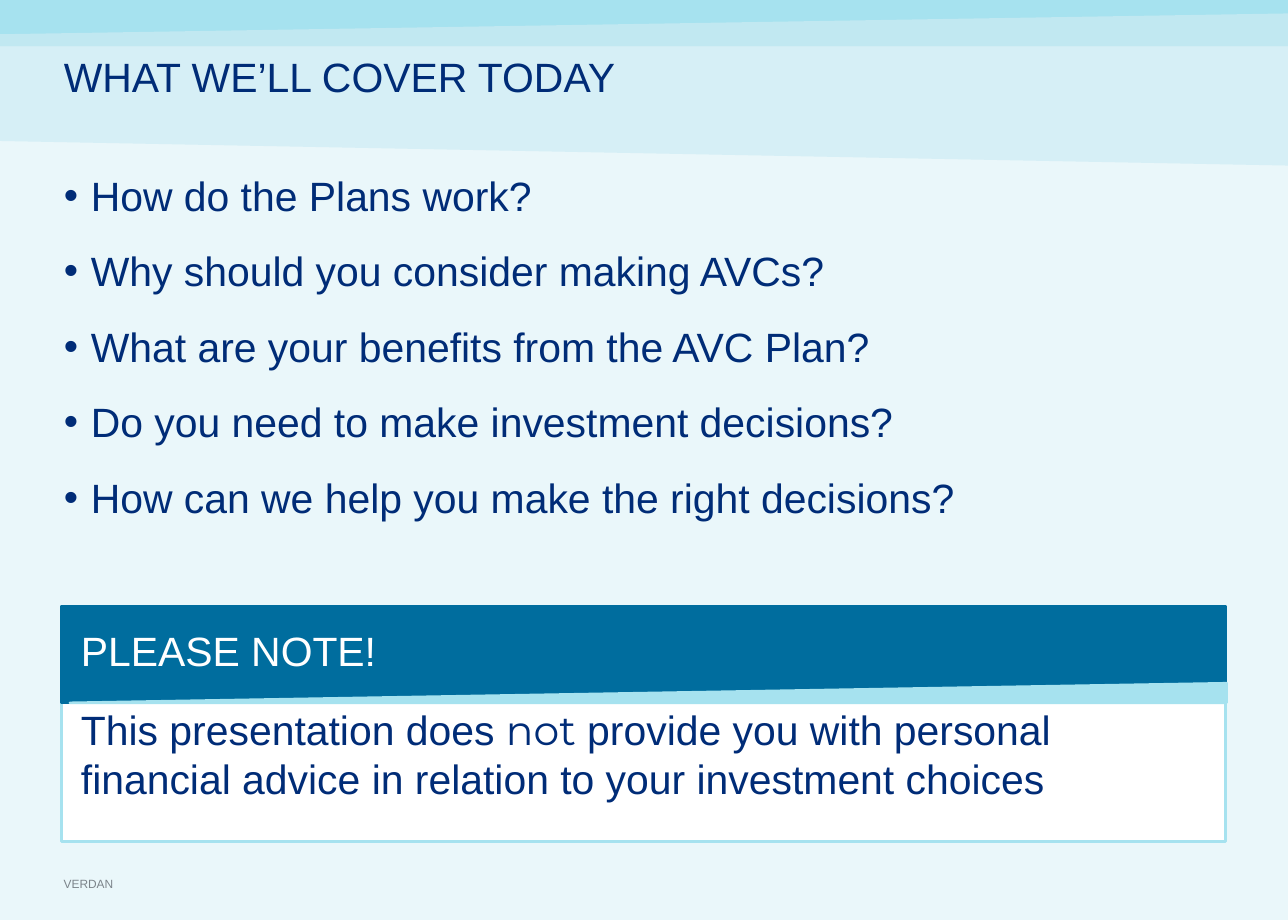
from pptx import Presentation
from pptx.dml.color import RGBColor
from pptx.enum.shapes import MSO_SHAPE
from pptx.enum.text import MSO_ANCHOR, MSO_AUTO_SIZE, PP_ALIGN
from pptx.util import Pt

RECT = MSO_SHAPE.RECTANGLE
TRIANGLE = MSO_SHAPE.RIGHT_TRIANGLE
TOP, BOTTOM = MSO_ANCHOR.TOP, MSO_ANCHOR.BOTTOM
LEFT = PP_ALIGN.LEFT
NO_FIT = MSO_AUTO_SIZE.NONE
PX = 9144  # 100 px to the inch
TITLE_AND_CONTENT = 1

COLORS = {
    "page": "EAF7FA", "navy": "002C77", "blue": "006D9E", "aqua": "A6E2EF",
    "mist": "C1E8F1", "haze": "D6EFF6", "white": "FFFFFF", "gray": "7C848A",
}


class Deck:
    font = "Arial"
    size = 24

    def __init__(self, width, height):
        self.prs = Presentation()
        self.prs.slide_width, self.prs.slide_height = width * PX, height * PX
        layout = self.prs.slide_layouts[TITLE_AND_CONTENT]
        self.slide = self.prs.slides.add_slide(layout)
        self.shapes = self.slide.shapes
        fill = self.slide.background.fill
        fill.solid()
        fill.fore_color.rgb = self.rgb("page")

    def rgb(self, name):
        return RGBColor.from_string(COLORS[name])

    def place(self, shape, box):
        for side, px in zip(("left", "top", "width", "height"), box):
            setattr(shape, side, px * PX)

    def paint(self, shape, fill, line=None):
        shape.shadow.inherit = False
        shape.fill.solid()
        shape.fill.fore_color.rgb = self.rgb(fill)
        if line:
            shape.line.color.rgb = self.rgb(line)
            shape.line.width = Pt(1.5)
        else:
            shape.line.fill.background()

    def set_text(self, shape, paragraphs, color="navy", size=size,
                 insets=(0, 0, 0, 0), anchor=TOP, wrap=True, **spacing):
        """Each paragraph is a list of (text, font) runs."""
        frame = shape.text_frame
        frame_format = {"auto_size": NO_FIT, "word_wrap": wrap,
                        "vertical_anchor": anchor}
        for side, px in zip(("left", "top", "right", "bottom"), insets):
            frame_format[f"margin_{side}"] = px * PX
        for name, value in frame_format.items():
            setattr(frame, name, value)
        for i, runs in enumerate(paragraphs):
            paragraph = frame.add_paragraph() if i else frame.paragraphs[0]
            for name, value in {"alignment": LEFT, **spacing}.items():
                setattr(paragraph, name, value)
            for text, font in runs:
                run = paragraph.add_run()
                run.text = text
                run.font.name, run.font.size = font, Pt(size)
                run.font.color.rgb = self.rgb(color)

    def band(self, points, fill):
        start, *rest = [(x * PX, y * PX) for x, y in points]
        builder = self.shapes.build_freeform(*start)
        builder.add_line_segments(rest, close=True)
        self.paint(builder.convert_to_shape(), fill)

    def title(self, text, box, **style):
        heading = self.shapes.title
        self.place(heading, box)
        self.set_text(heading, [[(text, self.font)]], **style)

    def bullets(self, items, box, indent, **style):
        body = self.slide.placeholders[1]
        self.place(body, box)
        self.set_text(body, [[(item, self.font)] for item in items], **style)
        for paragraph in body.text_frame.paragraphs:
            properties = paragraph._p.get_or_add_pPr()
            properties.set("marL", str(indent * PX))
            properties.set("indent", str(-indent * PX))

    def label(self, text, box, **style):
        caption = self.shapes.add_textbox(*(px * PX for px in box))
        self.set_text(caption, [[(text, self.font)]], **style)

    def panel(self, kind, box, fill, line, runs=(), flip=False, **style):
        shape = self.shapes.add_shape(kind, *(px * PX for px in box))
        self.paint(shape, fill, line)
        if flip:
            shape._element.spPr.xfrm.set("flipH", "1")
        if runs:
            self.set_text(shape, [runs], **style)


def main():
    deck = Deck(1050, 750)

    # Header bands, moved behind the placeholders
    deck.band([(0, 0), (1050, 0), (1050, 14), (0, 31)], "aqua")
    deck.band([(0, 28), (1050, 11), (1050, 38), (0, 38)], "mist")
    deck.band([(0, 38), (1050, 38), (1050, 135), (0, 115)], "haze")
    for placeholder in list(deck.slide.placeholders):
        deck.shapes._spTree.append(placeholder._element)

    # Title and agenda
    deck.title("WHAT WE’LL COVER TODAY", (52, 44, 945, 94),
               insets=(0, 5, 10, 5), line_spacing=0.83)
    deck.bullets([
        "How do the Plans work?",
        "Why should you consider making AVCs?",
        "What are your benefits from the AVC Plan?",
        "Do you need to make investment decisions?",
        "How can we help you make the right decisions?",
    ], (52, 139, 945, 543), indent=22, space_before=Pt(15.5))

    # Note box
    deck.panel(RECT, (50, 494, 949, 192), "white", "aqua", [
        ("This presentation does ", "Arial"),
        ("not", "Montserrat"),
        (" provide you with personal financial advice in relation to "
         "your investment choices", "Arial"),
    ], insets=(16, 80, 16, 16))
    deck.panel(RECT, (50, 494, 949, 79), "blue", "blue",
               [("PLEASE NOTE!", "Arial")], color="white",
               insets=(16, 16, 16, 24), space_before=Pt(5))
    deck.panel(TRIANGLE, (57, 557, 943, 16), "aqua", "aqua", flip=True)

    # Footer
    deck.label("VERDAN", (52, 715, 316, 11), color="gray", size=7,
               anchor=BOTTOM, wrap=False)

    deck.prs.save("out.pptx")


if __name__ == "__main__":
    main()
